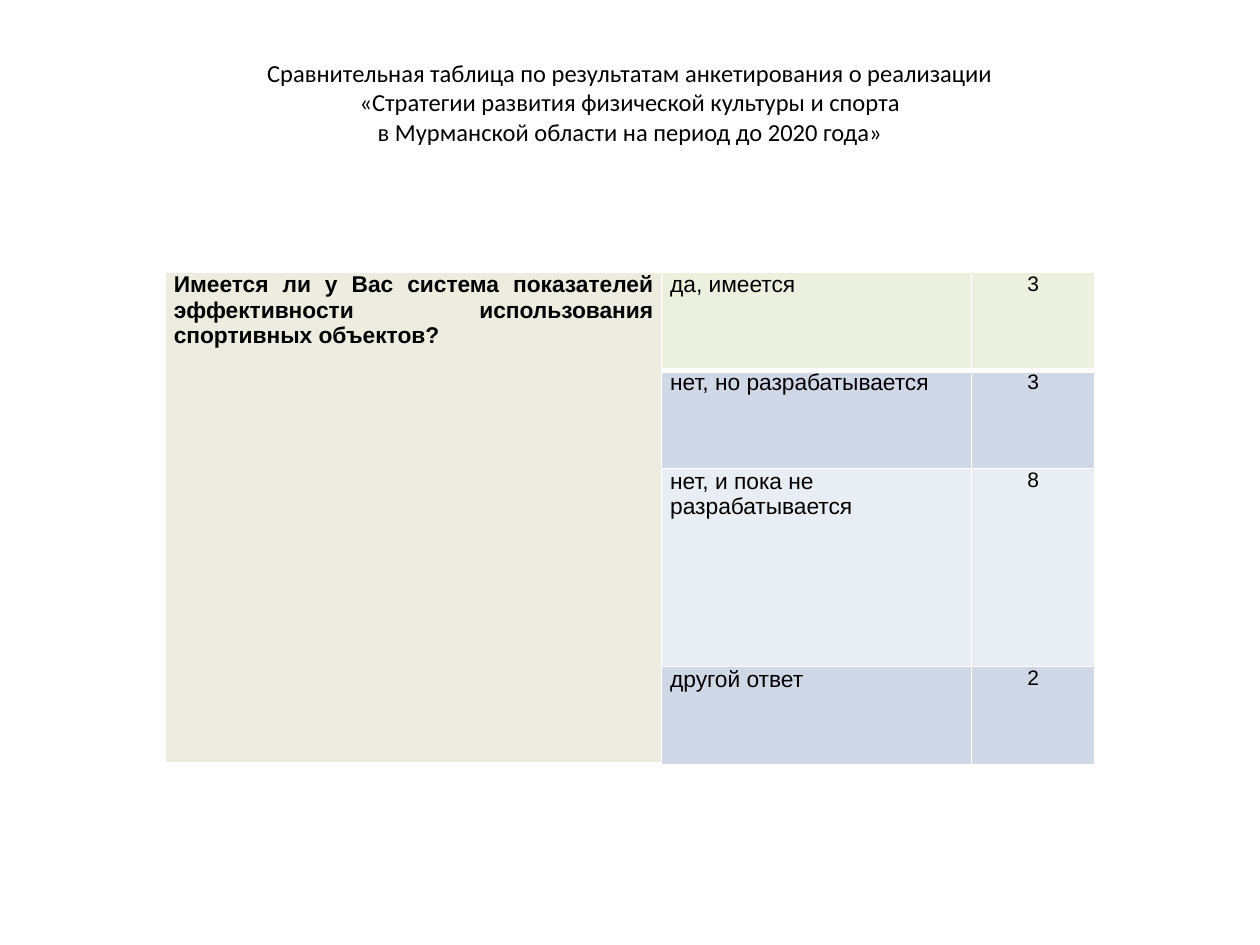
from lxml.etree import SubElement
from pptx import Presentation
from pptx.dml.color import RGBColor
from pptx.enum.text import MSO_ANCHOR, PP_ALIGN
from pptx.oxml.ns import qn
from pptx.util import Inches, Pt

# Content
TITLE = "\v".join([
    "Сравнительная таблица по результатам анкетирования о реализации",
    "«Стратегии развития физической культуры и спорта",
    "в Мурманской области на период до 2020 года»",
])
QUESTION = "Имеется ли у Вас система показателей эффективности использования спортивных объектов?"
QUESTION_FILL = "EEECE1"
# answer, count, row height, fill
ANSWERS = [
    ("да, имеется", "3", 0.78, "EBF1DE"),
    ("нет, но разрабатывается", "3", 0.78, "D0D8E8"),
    ("нет, и пока не разрабатывается", "8", 1.57, "E9EDF4"),
    ("другой ответ", "2", 0.78, "D0D8E8"),
]
COLUMN_WIDTHS = [3.94, 2.46, 0.98]
BLACK, WHITE = "000000", "FFFFFF"


def color(value):
    return RGBColor.from_string(value)


def write(frame, text, font, size, align, bold=False):
    frame.text = text
    paragraph = frame.paragraphs[0]
    paragraph.alignment = align
    for span in paragraph.runs:
        span.font.name = font
        span.font.size = Pt(size)
        span.font.bold = bold
        span.font.color.rgb = color(BLACK)


def style_cell(cell, fill, bottom_width):
    cell.margin_left = cell.margin_right = Inches(0.07)
    cell.margin_top = cell.margin_bottom = 0
    properties = cell._tc.get_or_add_tcPr()
    for side, width in (("L", 1), ("R", 1), ("T", 1), ("B", bottom_width)):
        line = SubElement(properties, qn(f"a:ln{side}"), w=str(Pt(width)))
        solid = SubElement(line, qn("a:solidFill"))
        SubElement(solid, qn("a:srgbClr"), val=WHITE)
    cell.fill.solid()
    cell.fill.fore_color.rgb = color(fill)


deck = Presentation()
deck.slide_width, deck.slide_height = Inches(10), Inches(7.5)
page = deck.slides.add_slide(deck.slide_layouts[6])

# Title
box = page.shapes.add_textbox(Inches(0.5), Inches(0.3), Inches(9), Inches(1.25))
frame = box.text_frame
frame.word_wrap = True
frame.vertical_anchor = MSO_ANCHOR.MIDDLE
frame.margin_bottom = Inches(0.28)
write(frame, TITLE, "Calibri", 14, PP_ALIGN.CENTER)

# Table grid
table_height = sum(height for _, _, height, _ in ANSWERS)
table = page.shapes.add_table(
    len(ANSWERS), len(COLUMN_WIDTHS), Inches(1.31), Inches(2.16),
    Inches(sum(COLUMN_WIDTHS)), Inches(table_height)).table
for column, width in zip(table.columns, COLUMN_WIDTHS):
    column.width = Inches(width)

# Answers and counts, with a thick rule under the first row
for index, (answer, count, height, fill) in enumerate(ANSWERS):
    table.rows[index].height = Inches(height)
    question_cell, answer_cell, count_cell = table.rows[index].cells
    bottom_width = 3 if index == 0 else 1
    style_cell(question_cell, QUESTION_FILL, 3 if index in (0, len(ANSWERS) - 1) else 1)
    style_cell(answer_cell, fill, bottom_width)
    style_cell(count_cell, fill, bottom_width)
    write(answer_cell.text_frame, answer, "Arial", 13, PP_ALIGN.LEFT)
    write(count_cell.text_frame, count, "Arial", 12, PP_ALIGN.CENTER)

# Question spanning all answers
question = table.cell(0, 0)
question.merge(table.cell(len(ANSWERS) - 1, 0))
write(question.text_frame, QUESTION, "Arial", 13, PP_ALIGN.JUSTIFY, bold=True)

deck.save("out.pptx")
